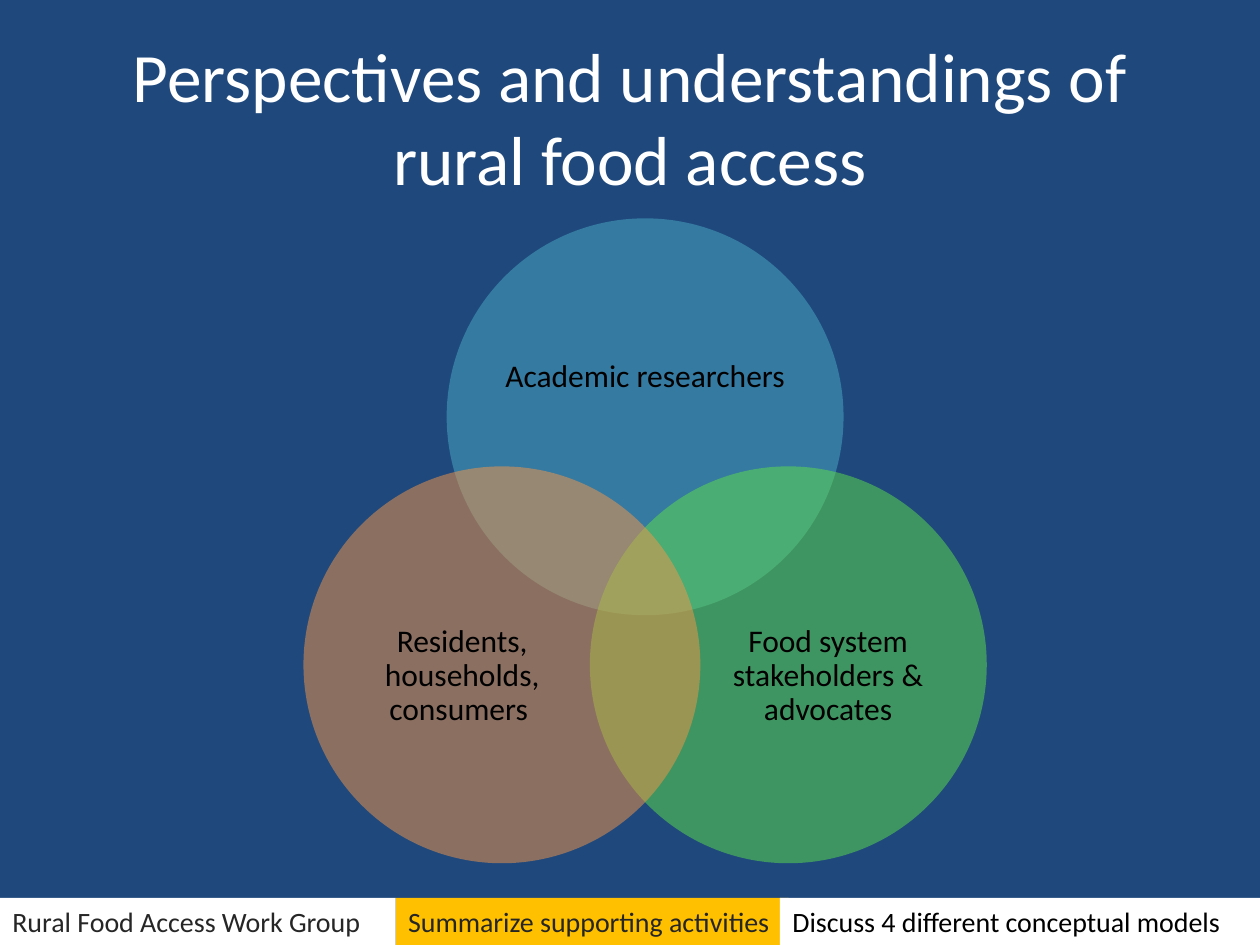
from dataclasses import dataclass
from math import cos, radians, sin

from lxml import etree
from pptx import Presentation
from pptx.dml.color import RGBColor
from pptx.enum.shapes import MSO_SHAPE
from pptx.enum.text import MSO_ANCHOR, PP_ALIGN
from pptx.oxml.ns import qn
from pptx.util import Inches, Pt

RECTANGLE, OVAL = MSO_SHAPE.RECTANGLE, MSO_SHAPE.OVAL
MIDDLE = MSO_ANCHOR.MIDDLE
LEFT, CENTER = PP_ALIGN.LEFT, PP_ALIGN.CENTER

WIDTH, HEIGHT = 10, 7.5  # slide size in inches


@dataclass(frozen=True)
class Theme:
    font: str = "Calibri"
    background: str = "1F497D"
    title: str = "FFFFFF"
    ink: str = "000000"
    soft_ink: str = "262626"
    bar: str = "FFFFFF"
    highlight: str = "FFC000"
    blue: str = "4BACC6"
    green: str = "60E146"
    orange: str = "F79646"
    title_size: float = 39.6
    label_size: float = 18
    footer_size: float = 16
    circle_opacity: float = 0.5


THEME = Theme()


@dataclass(frozen=True)
class Circle:
    """A Venn circle; label lengths are shares of the diameter."""
    text: str
    color: str
    angle: float
    label_shift: tuple[float, float]
    label_size: tuple[float, float]


@dataclass(frozen=True)
class FooterTab:
    """A footer cell; left and width are shares of the slide width."""
    text: str
    fill: str
    ink: str
    left: float
    width: float


# Venn layout in inches, from shares of the slide
DIAMETER = 0.42 * HEIGHT
ORBIT = DIAMETER / 2.4
VENN_X, VENN_Y = 0.51 * WIDTH + 0.02, 0.62 * HEIGHT - 0.03
FOOTER_TOP = 0.95 * HEIGHT

CIRCLES = [
    Circle("Academic researchers", THEME.blue, -90, (0, -0.1), (0.73, 0.45)),
    Circle("Food system stakeholders & advocates", THEME.green, 30,
           (0.1, 0.03), (0.6, 0.55)),
    Circle("Residents, households, consumers ", THEME.orange, 150,
           (-0.1, 0.03), (0.6, 0.55)),
]

# The highlighted tab comes first so its neighbours overlap it
FOOTER = [
    FooterTab("Summarize supporting activities", THEME.highlight,
              THEME.soft_ink, 0.314, 0.312),
    FooterTab("Rural Food Access Work Group", THEME.bar, THEME.soft_ink, 0, 0.314),
    FooterTab("Discuss 4 different conceptual models", THEME.bar,
              THEME.ink, 0.619, 0.381),
]


def add_filled(page, kind, left: float, top: float, width: float,
               height: float, color: str):
    shape = page.shapes.add_shape(
        kind, Inches(left), Inches(top), Inches(width), Inches(height))
    shape.shadow.inherit = False
    shape.fill.solid()
    shape.fill.fore_color.rgb = RGBColor.from_string(color)
    shape.line.fill.background()
    return shape


def write(box, text: str, size: float, color: str, align, wrap: bool = True):
    frame = box.text_frame
    frame.word_wrap = wrap
    frame.vertical_anchor = MIDDLE
    para = frame.paragraphs[0]
    para.alignment = align
    span = para.add_run()
    span.text = text
    span.font.name = THEME.font
    span.font.size = Pt(size)
    span.font.color.rgb = RGBColor.from_string(color)
    return frame


def add_text_box(page, left: float, top: float, width: float, height: float):
    return page.shapes.add_textbox(
        Inches(left), Inches(top), Inches(width), Inches(height))


def set_opacity(shape, share: float) -> None:
    color = shape.fill._xPr.find(qn("a:solidFill"))[0]
    etree.SubElement(color, qn("a:alpha")).set("val", str(int(share * 100000)))


def add_circle(page, circle: Circle) -> None:
    center_x = VENN_X + ORBIT * cos(radians(circle.angle))
    center_y = VENN_Y + ORBIT * sin(radians(circle.angle))
    disc = add_filled(page, OVAL, center_x - DIAMETER / 2,
                      center_y - DIAMETER / 2, DIAMETER, DIAMETER, circle.color)
    set_opacity(disc, THEME.circle_opacity)

    width, height = (share * DIAMETER for share in circle.label_size)
    shift_x, shift_y = (share * DIAMETER for share in circle.label_shift)
    label = add_text_box(page, center_x + shift_x - width / 2,
                         center_y + shift_y - height / 2, width, height)
    frame = write(label, circle.text, THEME.label_size, THEME.ink, CENTER)
    frame.margin_left = frame.margin_right = 0
    frame.margin_top = frame.margin_bottom = 0
    frame.paragraphs[0].line_spacing = 0.9


def add_footer_tab(page, tab: FooterTab) -> None:
    box = add_filled(page, RECTANGLE, tab.left * WIDTH, FOOTER_TOP,
                     tab.width * WIDTH, HEIGHT - FOOTER_TOP, tab.fill)
    write(box, tab.text, THEME.footer_size, tab.ink, LEFT, wrap=False)


def main() -> None:
    deck = Presentation()
    deck.slide_width, deck.slide_height = Inches(WIDTH), Inches(HEIGHT)
    page = deck.slides.add_slide(deck.slide_layouts[6])
    page.background.fill.solid()
    page.background.fill.fore_color.rgb = RGBColor.from_string(THEME.background)

    # Footer
    for tab in FOOTER:
        add_footer_tab(page, tab)

    # Venn diagram
    for circle in CIRCLES:
        add_circle(page, circle)

    # Title
    title = add_text_box(page, 0.05 * WIDTH, 0.04 * HEIGHT, 0.9 * WIDTH, 1.25)
    write(title, "Perspectives and understandings of rural food access",
          THEME.title_size, THEME.title, CENTER)

    deck.save("out.pptx")


if __name__ == "__main__":
    main()
